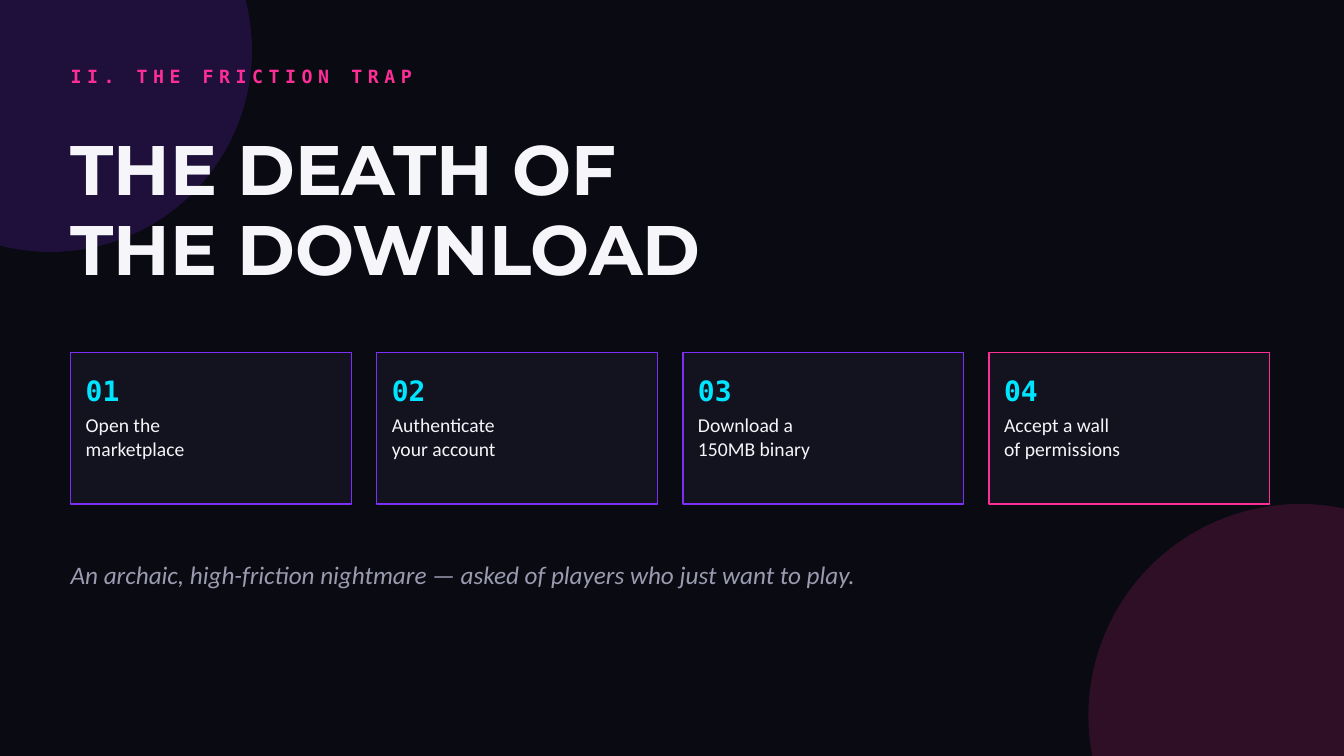
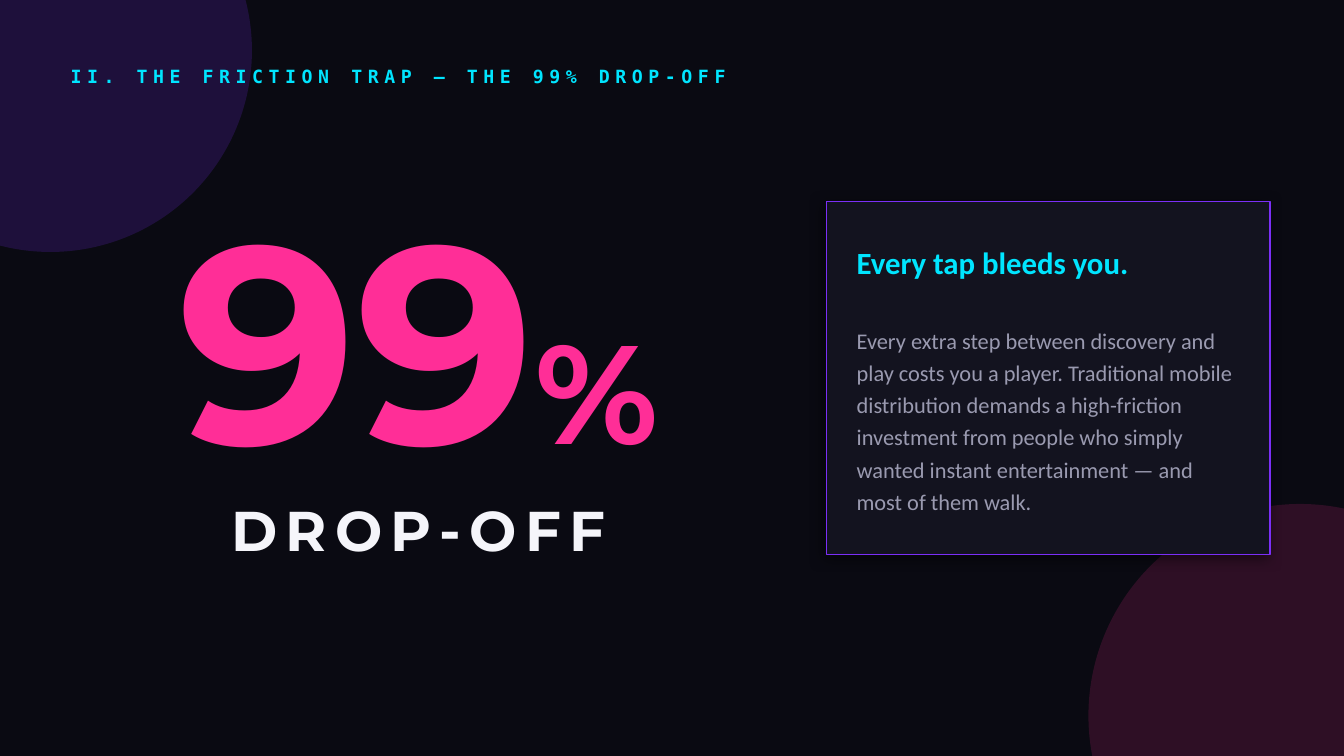
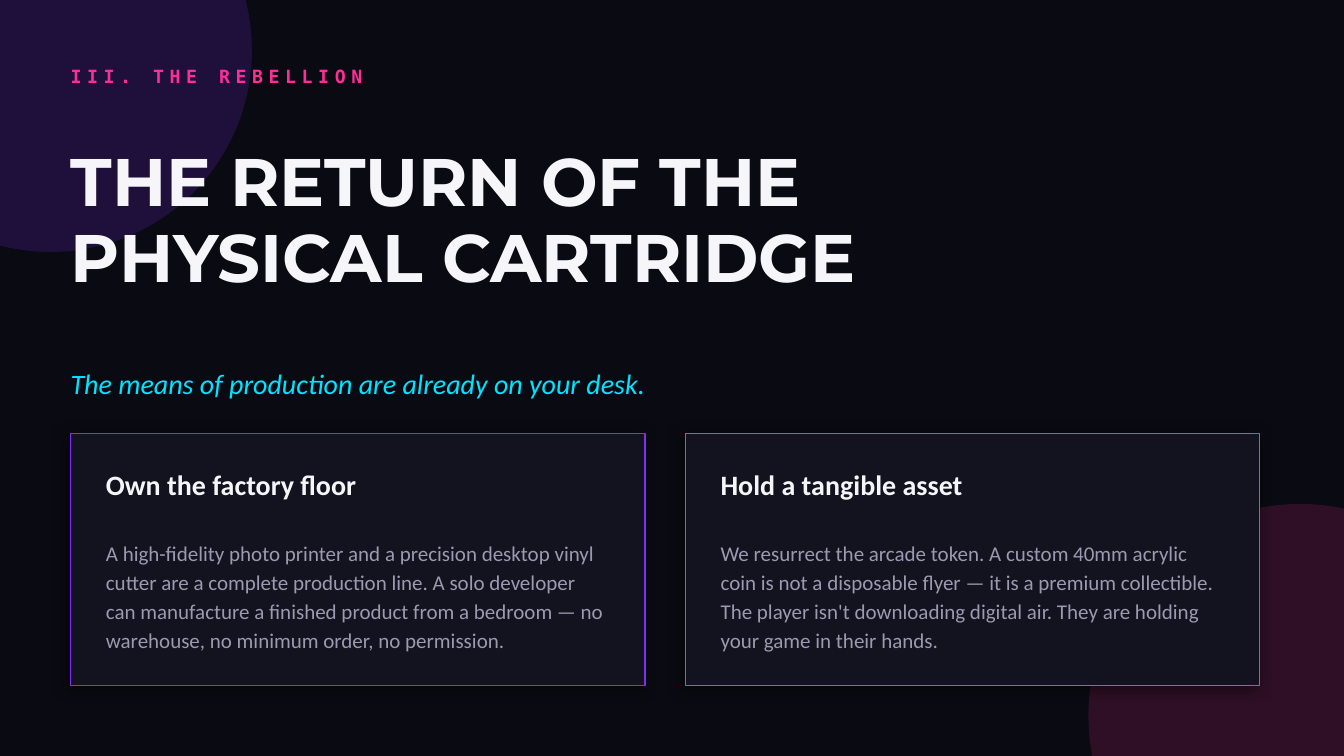
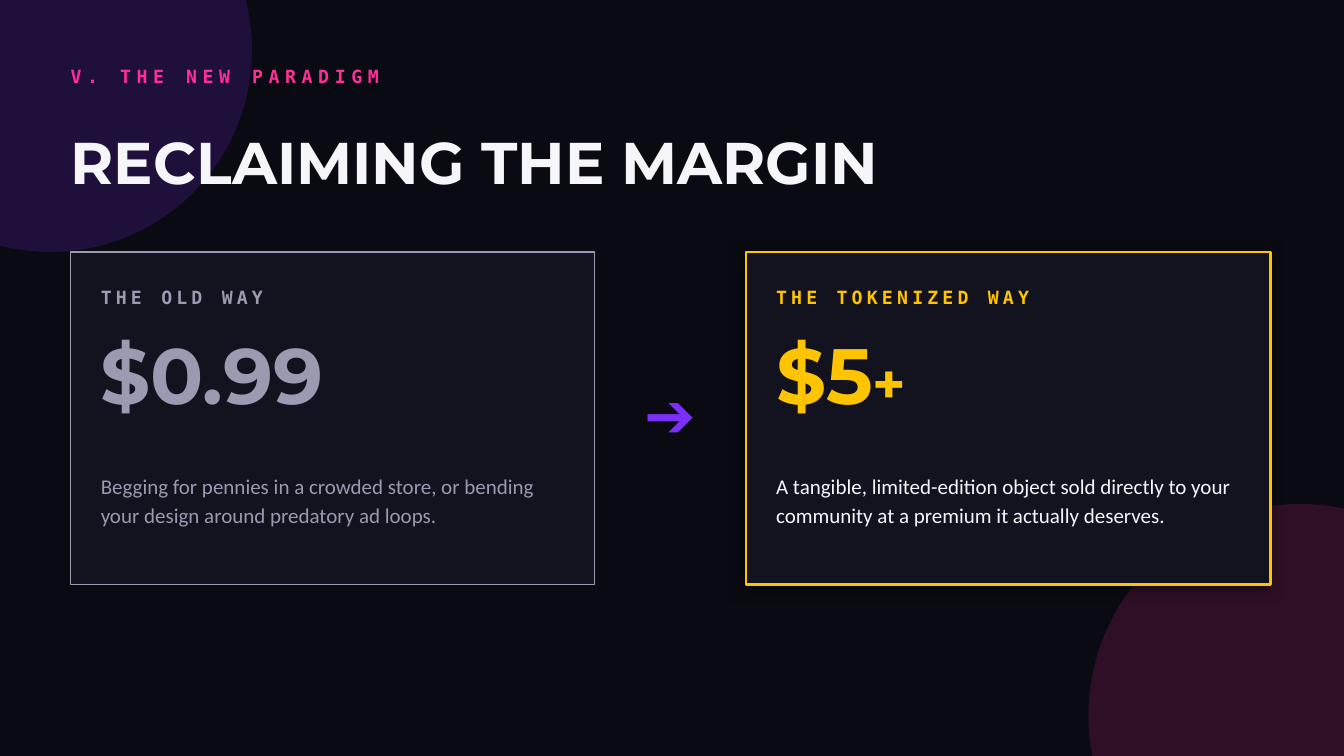
from dataclasses import dataclass

from lxml import etree
from pptx import Presentation
from pptx.dml.color import RGBColor
from pptx.enum.shapes import MSO_SHAPE
from pptx.enum.text import MSO_ANCHOR, PP_ALIGN
from pptx.oxml.ns import qn
from pptx.util import Cm, Pt

RECT, OVAL = MSO_SHAPE.RECTANGLE, MSO_SHAPE.OVAL
TOP, MIDDLE = MSO_ANCHOR.TOP, MSO_ANCHOR.MIDDLE
LEFT, CENTER = PP_ALIGN.LEFT, PP_ALIGN.CENTER


@dataclass(frozen=True)
class Theme:
    night: str = "0A0A12"
    panel: str = "13131F"
    violet: str = "7B2FF7"
    pink: str = "FF2E97"
    cyan: str = "00E5FF"
    gold: str = "FFC400"
    white: str = "F5F5FA"
    grey: str = "9A9AB0"
    shade: str = "000000"
    head: str = "Montserrat"
    mono: str = "DejaVu Sans Mono"
    body: str = "Calibri"
    symbol: str = "Arial"
    label: float = 13
    small: float = 14
    copy: float = 15
    lead: float = 16
    quote: float = 18
    subhead: float = 20
    callout: float = 22
    plus: float = 40
    banner: float = 40
    title_s: float = 42
    arrow: float = 44
    title_m: float = 48
    title_l: float = 50
    price: float = 56
    percent: float = 100
    figure: float = 200


T = Theme()


def add_box(s, kind, at, fill, alpha=None, line=None, weight=1, shadow=False):
    sp = s.shapes.add_shape(kind, *map(Cm, at))
    sp.shadow.inherit = False
    sp.fill.solid()
    sp.fill.fore_color.rgb = RGBColor.from_string(fill)
    spPr = sp._element.spPr
    if alpha:
        color = spPr.find(qn("a:solidFill")).find(qn("a:srgbClr"))
        etree.SubElement(color, qn("a:alpha")).set("val", str(alpha * 1000))
    if line:
        sp.line.color.rgb = RGBColor.from_string(line)
        sp.line.width = Pt(weight)
    else:
        sp.line.fill.background()
    if shadow:
        outer = etree.SubElement(spPr.find(qn("a:effectLst")), qn("a:outerShdw"))
        outer.set("blurRad", str(Pt(10)))
        outer.set("dist", str(Pt(3)))
        outer.set("dir", str(135 * 60000))
        color = etree.SubElement(outer, qn("a:srgbClr"))
        color.set("val", T.shade)
        etree.SubElement(color, qn("a:alpha")).set("val", "50000")


def add_text(s, at, paragraphs, font, color, bold=False, italic=False,
             tracking=0, leading=None, align=LEFT, anchor=MIDDLE):
    tf = s.shapes.add_textbox(*map(Cm, at)).text_frame
    tf.word_wrap = True
    tf.vertical_anchor = anchor
    tf.margin_left = tf.margin_right = tf.margin_top = tf.margin_bottom = 0
    for i, runs in enumerate(paragraphs):
        p = tf.add_paragraph() if i else tf.paragraphs[0]
        p.alignment = align
        if leading:
            p.line_spacing = leading
        for words, size in runs:
            r = p.add_run()
            r.text = words
            r.font.name = font
            r.font.size = Pt(size)
            r.font.bold = bold
            r.font.italic = italic
            r.font.color.rgb = RGBColor.from_string(color)
            if tracking:
                r._r.get_or_add_rPr().set("spc", str(tracking * 100))


prs = Presentation()
prs.slide_width, prs.slide_height = Cm(33.87), Cm(19.05)
bg = prs.slide_master.background.fill
bg.solid()
bg.fore_color.rgb = RGBColor.from_string(T.night)

MARGIN = 1.78
WIDTH = 30.22

slides = []
for kicker, color in [
    ("II. THE FRICTION TRAP", T.pink),
    ("II. THE FRICTION TRAP — THE 99% DROP-OFF", T.cyan),
    ("III. THE REBELLION", T.pink),
    ("V. THE NEW PARADIGM", T.pink),
]:
    s = prs.slides.add_slide(prs.slide_layouts[6])
    add_box(s, OVAL, (-3.81, -3.81, 10.16, 10.16), T.violet, alpha=18)
    add_box(s, OVAL, (27.43, 12.7, 10.67, 10.67), T.pink, alpha=15)
    add_text(s, (MARGIN, 1.4, 20.32, 1.02), [[(kicker, T.label)]],
             T.mono, color, bold=True, tracking=4)
    slides.append(s)
friction, dropoff, rebellion, paradigm = slides

for s, top, height, size, lines, leading in [
    (friction, 3.05, 4.57, T.title_l, ["THE DEATH OF", "THE DOWNLOAD"], 0.95),
    (rebellion, 3.3, 4.57, T.title_m, ["THE RETURN OF THE", "PHYSICAL CARTRIDGE"], 0.95),
    (paradigm, 2.92, 2.29, T.title_s, ["RECLAIMING THE MARGIN"], None),
]:
    add_text(s, (MARGIN, top, WIDTH, height), [[(line, size)] for line in lines],
             T.head, T.white, bold=True, leading=leading)

steps = [
    ("Open the", "marketplace", T.violet),
    ("Authenticate", "your account", T.violet),
    ("Download a", "150MB binary", T.violet),
    ("Accept a wall", "of permissions", T.pink),
]
gap, pad = 0.64, 0.38
card_w = (WIDTH - gap * (len(steps) - 1)) / len(steps)
for i, (first, second, line) in enumerate(steps):
    x = MARGIN + i * (card_w + gap)
    text_w = card_w - 2 * pad
    add_box(friction, RECT, (x, 8.89, card_w, 3.81), T.panel, line=line)
    add_text(friction, (x + pad, 9.19, text_w, 1.27),
             [[(f"{i + 1:02d}", T.subhead)]], T.mono, T.cyan, bold=True)
    add_text(friction, (x + pad, 10.41, text_w, 2.03),
             [[(first, T.small)], [(second, T.small)]], T.body, T.white, anchor=TOP)
add_text(friction, (MARGIN, 13.72, WIDTH, 1.52),
         [[("An archaic, high-friction nightmare — asked of players who just want to play.",
            T.quote)]], T.body, T.grey, italic=True)

add_text(dropoff, (1.02, 4.06, 19.05, 8.64), [[("99", T.figure), ("%", T.percent)]],
         T.head, T.pink, bold=True, align=CENTER)
add_text(dropoff, (1.02, 12.45, 19.05, 1.78), [[("DROP-OFF", T.banner)]],
         T.head, T.white, bold=True, tracking=6, align=CENTER)
add_box(dropoff, RECT, (20.83, 5.08, 11.18, 8.89), T.panel, line=T.violet, shadow=True)
add_text(dropoff, (21.59, 5.84, 9.65, 1.52), [[("Every tap bleeds you.", T.callout)]],
         T.body, T.cyan, bold=True)
add_text(dropoff, (21.59, 7.62, 9.65, 5.84),
         [[("Every extra step between discovery and play costs you a player. "
            "Traditional mobile distribution demands a high-friction investment from "
            "people who simply wanted instant entertainment — and most of them walk.",
            T.lead)]], T.body, T.grey, leading=1.2)

add_text(rebellion, (MARGIN, 8.89, WIDTH, 1.52),
         [[("The means of production are already on your desk.", T.subhead)]],
         T.body, T.cyan, italic=True)
for i, (heading, words, line) in enumerate([
    ("Own the factory floor",
     "A high-fidelity photo printer and a precision desktop vinyl cutter are a complete "
     "production line. A solo developer can manufacture a finished product from a "
     "bedroom — no warehouse, no minimum order, no permission.", T.violet),
    ("Hold a tangible asset",
     "We resurrect the arcade token. A custom 40mm acrylic coin is not a disposable "
     "flyer — it is a premium collectible. The player isn't downloading digital air. "
     "They are holding your game in their hands.", T.pink),
]):
    x = MARGIN + i * 15.49
    add_box(rebellion, RECT, (x, 10.92, 14.48, 6.35), T.panel, line=line, shadow=True)
    add_text(rebellion, (x + 0.89, 11.56, 12.7, 1.27), [[(heading, T.subhead)]],
             T.body, T.white, bold=True)
    add_text(rebellion, (x + 0.89, 12.95, 12.7, 4.06), [[(words, T.copy)]],
             T.body, T.grey, leading=1.15)

for i, (label, price, words, accent, ink, weight, shadow) in enumerate([
    ("THE OLD WAY", [("$0.99", T.price)],
     "Begging for pennies in a crowded store, or bending your design around "
     "predatory ad loops.", T.grey, T.grey, 1, False),
    ("THE TOKENIZED WAY", [("$5", T.price), ("+", T.plus)],
     "A tangible, limited-edition object sold directly to your community at a premium "
     "it actually deserves.", T.gold, T.white, 2, True),
]):
    x = MARGIN + i * 17.02
    add_box(paradigm, RECT, (x, 6.35, 13.21, 8.38), T.panel,
            line=accent, weight=weight, shadow=shadow)
    add_text(paradigm, (x + 0.76, 6.99, 11.68, 1.02), [[(label, T.label)]],
             T.mono, accent, bold=True, tracking=3)
    add_text(paradigm, (x + 0.76, 8.13, 11.68, 2.54), [price],
             T.head, accent, bold=True)
    add_text(paradigm, (x + 0.76, 11.05, 11.68, 3.05), [[(words, T.copy)]],
             T.body, ink, leading=1.15)
add_text(paradigm, (15.11, 9.4, 3.56, 2.03), [[("➔", T.arrow)]],
         T.symbol, T.violet, bold=True, align=CENTER)

prs.save("out.pptx")
